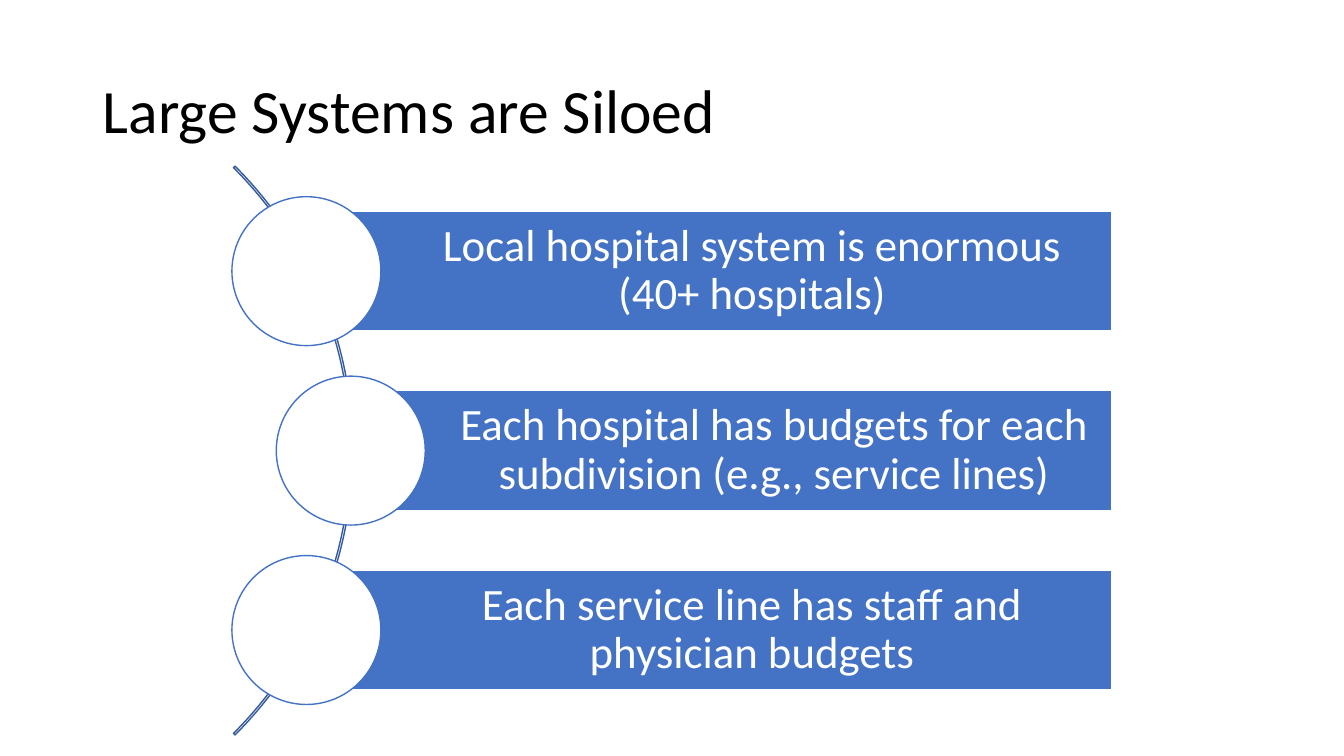
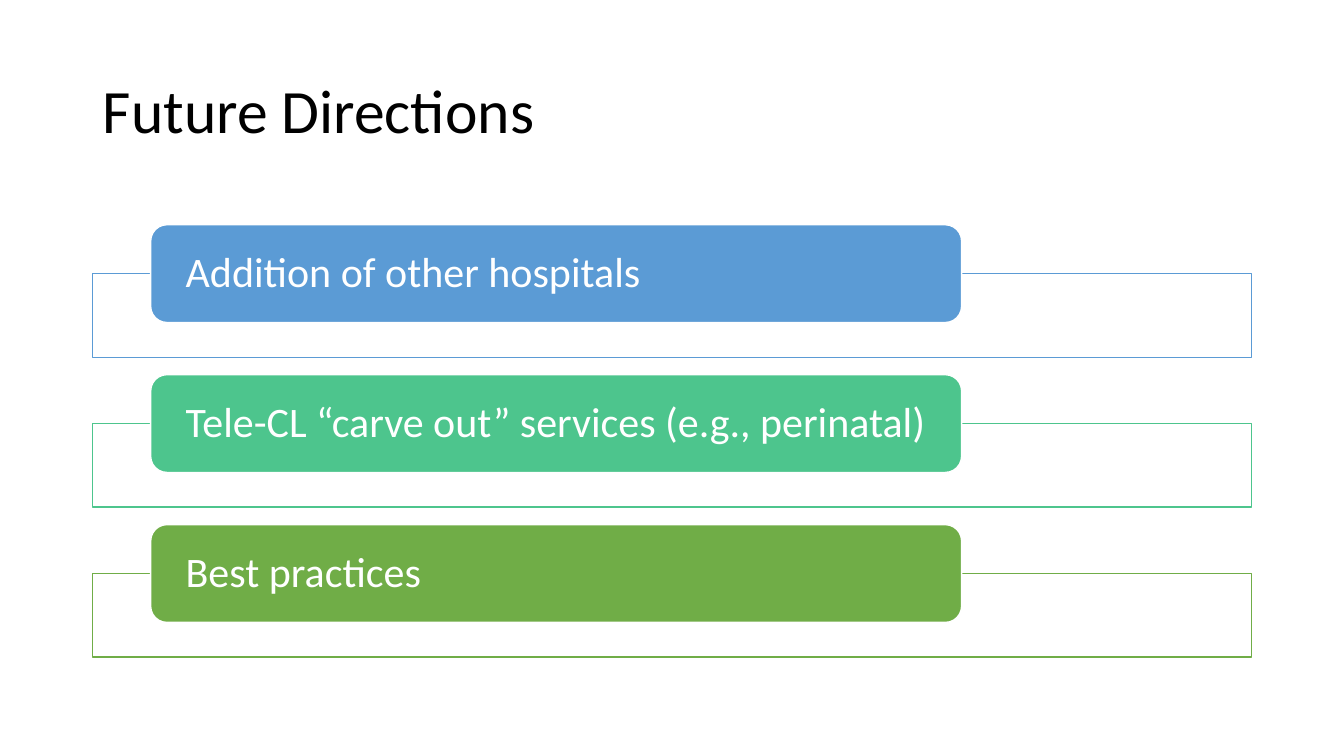
from lxml import etree
from pptx import Presentation
from pptx.dml.color import RGBColor
from pptx.enum.shapes import MSO_SHAPE
from pptx.enum.text import MSO_ANCHOR, MSO_AUTO_SIZE, PP_ALIGN
from pptx.oxml.ns import qn
from pptx.util import Inches, Pt

RECT, ROUND = MSO_SHAPE.RECTANGLE, MSO_SHAPE.ROUNDED_RECTANGLE
OVAL, ARC = MSO_SHAPE.OVAL, MSO_SHAPE.BLOCK_ARC
MIDDLE, NO_FIT = MSO_ANCHOR.MIDDLE, MSO_AUTO_SIZE.NONE
LEFT, CENTER = PP_ALIGN.LEFT, PP_ALIGN.CENTER

BLACK = RGBColor(0x00, 0x00, 0x00)
WHITE = RGBColor(0xFF, 0xFF, 0xFF)
BLUE = RGBColor(0x44, 0x72, 0xC4)
DARK_BLUE = RGBColor(0x36, 0x5B, 0x9D)
SKY = RGBColor(0x5B, 0x9B, 0xD5)
MINT = RGBColor(0x4D, 0xC5, 0x8D)
GREEN = RGBColor(0x70, 0xAD, 0x47)

FONT = "Calibri"
SLIDE_W, SLIDE_H = 13.33, 7.5
MARGIN = 0.92
CONTENT_W = SLIDE_W - 2 * MARGIN
TITLE_ONLY = 5


def place(sp, x, y, w, h):
    sp.left, sp.top, sp.width, sp.height = (Inches(v) for v in (x, y, w, h))


def write(sp, text, size, color, align, insets):
    tf = sp.text_frame
    tf.word_wrap = True
    tf.auto_size = NO_FIT
    tf.vertical_anchor = MIDDLE
    (tf.margin_left, tf.margin_top,
     tf.margin_right, tf.margin_bottom) = (Inches(v) for v in insets)
    p = tf.paragraphs[0]
    p.alignment = align
    p.line_spacing = 0.9
    r = p.add_run()
    r.text = text
    r.font.name = FONT
    r.font.size = Pt(size)
    r.font.color.rgb = color


def add_box(s, kind, box, fill, line):
    sp = s.shapes.add_shape(kind, *(Inches(v) for v in box))
    sp.shadow.inherit = False
    if fill is None:
        sp.fill.background()
    else:
        sp.fill.solid()
        sp.fill.fore_color.rgb = fill
    sp.line.color.rgb = line
    sp.line.width = Pt(1)
    return sp


def set_alpha(sp, percent):
    clr = sp.fill._xPr.find(qn("a:solidFill"))[0]
    etree.SubElement(clr, qn("a:alpha")).set("val", str(percent * 1000))


def add_titled_slide(prs, title):
    s = prs.slides.add_slide(prs.slide_layouts[TITLE_ONLY])
    place(s.shapes.title, MARGIN, 0.4, CONTENT_W, 1.45)
    write(s.shapes.title, title, 44, BLACK, LEFT, (0.1, 0.05, 0.1, 0.05))
    return s


def add_curved_list(s, box, items):
    """Bars led by circles that sit on an arc bulging to the right."""
    x, y, w, h = box
    pitch = h / len(items)
    dia, bar_h = pitch * 0.83, pitch * 2 / 3
    mid = (len(items) - 1) / 2

    # Arc from -45 to 45 degrees, centred on the list
    arc_d = 7.98
    arc = add_box(s, ARC, (x + 1.2 - arc_d, y + (h - arc_d) / 2, arc_d, arc_d),
                  None, DARK_BLUE)
    for i, value in enumerate((189, 27, 0.0027)):
        arc.adjustments[i] = value

    # Bars and their circles
    for i, text in enumerate(items):
        cx = x + dia / 2 + 0.44 * (1 - abs(i - mid))
        cy = y + pitch * (i + 0.5)
        bar = add_box(s, RECT, (cx, cy - bar_h / 2, x + w - cx, bar_h),
                      BLUE, WHITE)
        write(bar, text, 32, WHITE, CENTER, (0.94, 0.09, 0.09, 0.09))
        add_box(s, OVAL, (cx - dia / 2, cy - dia / 2, dia, dia), WHITE, BLUE)


def add_tab_list(s, box, items):
    """Outlined frames, each with a rounded label over its top edge."""
    x, y, w, h = box
    label_h, frame_h = 0.97, 0.83
    pitch = (h - label_h / 2 - frame_h) / (len(items) - 1)
    for i, (text, color) in enumerate(items):
        top = y + i * pitch
        frame = add_box(s, RECT, (x, top + label_h / 2, w, frame_h),
                        WHITE, color)
        set_alpha(frame, 90)
        label = add_box(s, ROUND, (x + w * 0.05, top, w * 0.7, label_h),
                        color, WHITE)
        write(label, text, 30, WHITE, LEFT, (0.3, 0, 0.1, 0))


def main():
    prs = Presentation()
    prs.slide_width, prs.slide_height = Inches(SLIDE_W), Inches(SLIDE_H)

    s = add_titled_slide(prs, "Large Systems are Siloed")
    add_curved_list(s, (2.3, 1.8, 8.73, 5.34), [
        "Local hospital system is enormous (40+ hospitals)",
        "Each hospital has budgets for each subdivision (e.g., service lines)",
        "Each service line has staff and physician budgets",
    ])

    s = add_titled_slide(prs, "Future Directions")
    add_tab_list(s, (MARGIN, 2.23, CONTENT_W, 4.29), [
        ("Addition of other hospitals", SKY),
        ("Tele-CL “carve out” services (e.g., perinatal)", MINT),
        ("Best practices", GREEN),
    ])

    prs.save("out.pptx")


if __name__ == "__main__":
    main()
